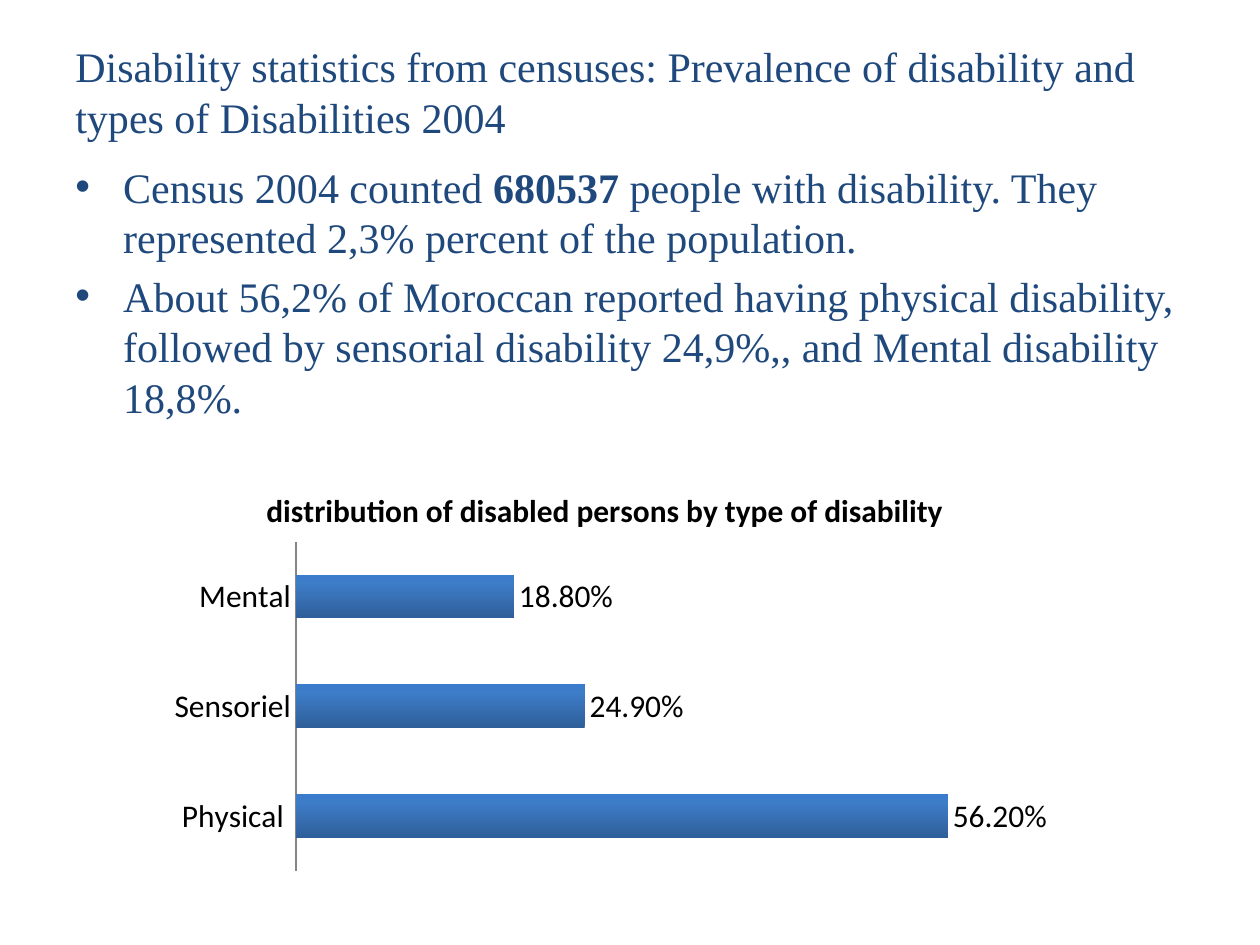
from copy import deepcopy

from lxml import etree
from pptx import Presentation
from pptx.chart.data import CategoryChartData
from pptx.dml.color import RGBColor
from pptx.enum.chart import XL_CHART_TYPE, XL_LABEL_POSITION, XL_TICK_MARK
from pptx.enum.text import MSO_ANCHOR
from pptx.oxml.ns import qn
from pptx.util import Inches, Pt

BAR = XL_CHART_TYPE.BAR_CLUSTERED
OUT_END = XL_LABEL_POSITION.OUTSIDE_END
NO_TICK = XL_TICK_MARK.NONE
MIDDLE = MSO_ANCHOR.MIDDLE

NAVY = RGBColor(0x1F, 0x49, 0x7D)
BLACK = RGBColor(0, 0, 0)
WHITE = RGBColor(0xFF, 0xFF, 0xFF)
GRAY = RGBColor(0x86, 0x86, 0x86)
SHADES = [
    (0, RGBColor(0x2F, 0x5F, 0x99)),
    (0.8, RGBColor(0x3D, 0x7C, 0xC7)),
    (1, RGBColor(0x3A, 0x7C, 0xCB)),
]

# Content: the title ends in a line break; bullets are (text, bold) runs
TITLE = ("Disability statistics from censuses: Prevalence of disability and "
         "types of Disabilities 2004\v")
BULLETS = [
    [("Census 2004 counted ", False), ("680537 ", True),
     ("people with disability. They represented 2,3% percent of the "
      "population.", False)],
    [("About 56,2% of Moroccan reported having physical disability, followed "
      "by sensorial disability 24,9%,, and Mental disability 18,8%.", False)],
]
HEAD = "distribution of disabled persons by type of disability"
SHARES = {"Physical ": 0.562, "Sensoriel": 0.249, "Mental": 0.188}


def add_box(slide, *place):
    box = slide.shapes.add_textbox(*map(Inches, place))
    box.text_frame.word_wrap = True
    return box


def set_font(font, name, size, color):
    font.name, font.size, font.color.rgb = name, Pt(size), color


def add_bullet(para):
    props = para._p.get_or_add_pPr()
    props.set("marL", str(Inches(0.38)))
    props.set("indent", str(-Inches(0.38)))
    etree.SubElement(props, qn("a:buFont")).set("typeface", "Arial")
    etree.SubElement(props, qn("a:buChar")).set("char", "•")


def set_layout(part, index, **values):
    """Place a chart part by fractions of the chart's size."""
    old = part.find(qn("c:layout"))
    if old is not None:
        part.remove(old)
    layout = etree.Element(qn("c:layout"))
    part.insert(index, layout)
    manual = etree.SubElement(layout, qn("c:manualLayout"))
    for tag, value in values.items():
        etree.SubElement(manual, qn("c:" + tag)).set("val", str(value))


prs = Presentation()
prs.slide_width, prs.slide_height = Inches(10), Inches(7.5)
slide = prs.slides.add_slide(prs.slide_layouts[6])

# Title
box = add_box(slide, 0.5, 0.3, 9, 1.25)
box.fill.solid()
box.fill.fore_color.rgb = WHITE
box.text_frame.vertical_anchor = MIDDLE
para = box.text_frame.paragraphs[0]
para.text = TITLE
set_font(para.font, "Times New Roman", 24, NAVY)

# Bullets
frame = add_box(slide, 0.5, 1.23, 9, 5.47).text_frame
for i, runs in enumerate(BULLETS):
    para = frame.add_paragraph() if i else frame.paragraphs[0]
    para.space_before = Pt(4.8)
    add_bullet(para)
    set_font(para.font, "Times New Roman", 24, NAVY)
    for text, bold in runs:
        run = para.add_run()
        run.text = text
        run.font.bold = bold

# Chart
data = CategoryChartData(number_format="0.00%")
data.categories = list(SHARES)
data.add_series("Series 1", list(SHARES.values()))
place = map(Inches, (1.3, 3.67, 7.01, 3.31))
chart = slide.shapes.add_chart(BAR, *place, data).chart
set_font(chart.font, "Calibri", 10, BLACK)
chart.has_legend = False

# Chart title
chart.has_title = True
para = chart.chart_title.text_frame.paragraphs[0]
para.text = HEAD
set_font(para.font, "Calibri", 18, BLACK)
para.font.bold = True
set_layout(chart.chart_title._element, 1,
           xMode="edge", yMode="edge", x=0.11, y=0.05)

# Axes
cats, vals = chart.category_axis, chart.value_axis
cats.major_tick_mark = cats.minor_tick_mark = NO_TICK
set_font(cats.tick_labels.font, "Calibri", 18, BLACK)
cats.format.line.color.rgb = GRAY
vals.has_major_gridlines = False
vals.minimum_scale, vals.maximum_scale = 0, 0.6
vals.visible = False

# Bars and labels
plot = chart.plots[0]
plot.gap_width, plot.overlap = 150, -25
plot.vary_by_categories = False
set_layout(plot._element.getparent(), 0, layoutTarget="inner",
           xMode="edge", yMode="edge", x=0.15, y=0.19, w=0.79, h=0.79)
plot.has_data_labels = True
labels = plot.data_labels
labels.show_value = True
labels.number_format, labels.number_format_is_linked = "0.00%", False
labels.position = OUT_END
set_font(labels.font, "Calibri", 18, BLACK)

series = plot.series[0]
fill = series.format.fill
fill.gradient()
fill.gradient_angle = 90
stops = next(series._element.iter(qn("a:gsLst")))
stops.append(deepcopy(stops[0]))
for stop, (spot, color) in zip(fill.gradient_stops, SHADES):
    stop.position, stop.color.rgb = spot, color

prs.save("out.pptx")
